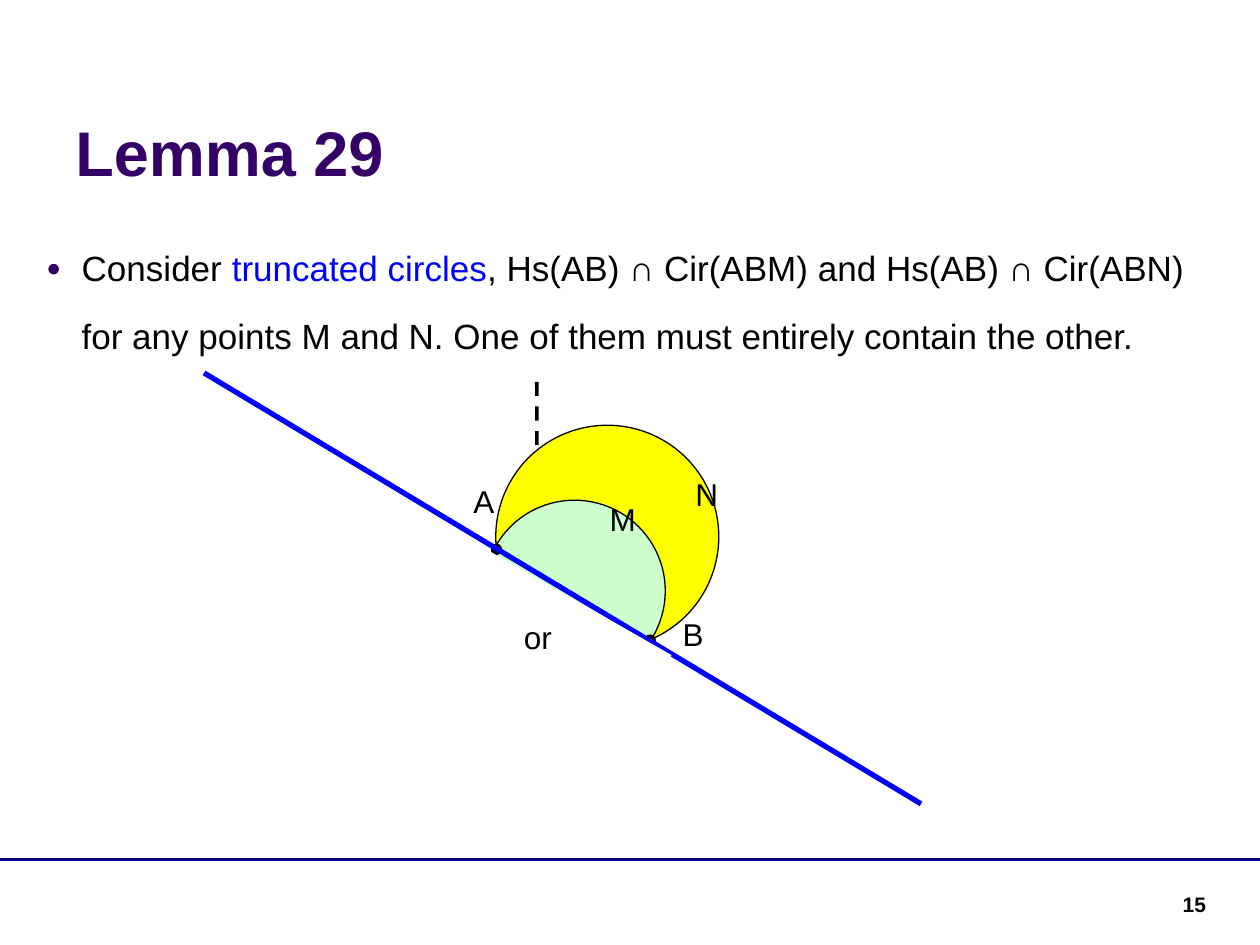
import pptx
import pptx.util
import pptx.dml.color
import pptx.enum.dml
import pptx.enum.shapes
import pptx.enum.text
import pptx.oxml
import pptx.oxml.ns

In, Pt = pptx.util.Inches, pptx.util.Pt
SHAPE = pptx.enum.shapes.MSO_SHAPE
ALIGN = pptx.enum.text.PP_ALIGN
ANCHOR = pptx.enum.text.MSO_ANCHOR
DASH = pptx.enum.dml.MSO_LINE.DASH
W, H = 10, 7.5

COLORS = {"rule": "000080", "ink": "000000", "title": "330066", "edge": "0000FF",
          "outer": "FFFF00", "inner": "CCFFCC", "paper": "FFFFFF"}

# Content
TITLE = [("Lemma 29", "title")]
NUMBER = [("15", "ink")]
LEMMA = [
    ("Consider ", "ink"), ("truncated circles", "edge"),
    (", Hs(AB) ∩ Cir(ABM) and Hs(AB) ∩ Cir(ABN) for any points M and N. "
     "One of them must entirely contain the other.", "ink")]

# Diagram: circles as (centre x, centre y, diameter, fill)
CIRCLE_N = (4.82, 4.26, 1.77, "outer")
CIRCLE_M = (4.56, 4.69, 1.44, "inner")
POINTS = [(3.94, 4.36, 0.08, "ink"), (5.16, 5.08, 0.08, "ink")]
HALF_PLANE = [(2.61, 5.46), (4.48, 6.59), (5.33, 5.2), (3.51, 4.16)]
# Labels as (text, left, top, width)
END_LABELS = [("A", 3.66, 3.78, 0.94), ("B", 5.32, 4.83, 0.94)]
OR_LABEL = ("or", 4.06, 4.86, 0.85)
CIRCLE_LABELS = [("M", 4.74, 3.92, 0.94), ("N", 5.42, 3.72, 0.94)]

prs = pptx.Presentation()
prs.slide_width, prs.slide_height = In(W), In(H)
s = prs.slides.add_slide(prs.slide_layouts[6])


def rgb(name):
    return pptx.dml.color.RGBColor.from_string(COLORS[name])


def add_line(start, end, color, width, dash=None):
    c = s.shapes.add_connector(pptx.enum.shapes.MSO_CONNECTOR.STRAIGHT,
                               *(In(v) for v in start + end))
    c.line.color.rgb = rgb(color)
    for key, value in {"width": Pt(width), "dash_style": dash}.items():
        setattr(c.line, key, value)
    pptx.oxml.ns.qn("a:effectLst")
    c._element.spPr.append(pptx.oxml.parse_xml(
        '<a:effectLst %s/>' % pptx.oxml.ns.nsdecls("a")))


def paint(sp, fill, line=None):
    sp.shadow.inherit = False
    sp.fill.solid()
    sp.fill.fore_color.rgb = rgb(fill)
    if line:
        sp.line.color.rgb = rgb(line)
        sp.line.width = Pt(0.75)
    else:
        sp.line.fill.background()


def add_circle(x, y, d, fill):
    sp = s.shapes.add_shape(SHAPE.OVAL, In(x - d / 2), In(y - d / 2), In(d), In(d))
    paint(sp, fill, "ink")


def add_text(runs, box, size, bold=False, align=ALIGN.LEFT, anchor=ANCHOR.TOP):
    tf = s.shapes.add_textbox(*(In(v) for v in box)).text_frame
    for key, value in {"word_wrap": True, "vertical_anchor": anchor}.items():
        setattr(tf, key, value)
    p = tf.paragraphs[0]
    p.alignment = align
    for text, color in runs:
        r = p.add_run()
        r.text = text
        for key, value in {"name": "Arial", "size": Pt(size), "bold": bold}.items():
            setattr(r.font, key, value)
        r.font.color.rgb = rgb(color)
    return p


def add_label(text, left, top, width):
    add_text([(text, "ink")], (left, top, width, 0.4), 18)


def add_bullet(p):
    pPr = p._p.get_or_add_pPr()
    pPr.set("marL", str(In(0.4)))
    pPr.set("indent", str(In(-0.28)))
    for tag in ('<a:buClr %s><a:srgbClr val="' + COLORS["title"] + '"/></a:buClr>',
                '<a:buSzPct %s val="70000"/>', '<a:buFont %s typeface="Arial"/>',
                '<a:buChar %s char="●"/>'):
        pPr.append(pptx.oxml.parse_xml(tag % pptx.oxml.ns.nsdecls("a")))


# Footer rule, dashed guide and larger circle
add_line((0, 6.82), (W, 6.82), "rule", 2)
add_line((4.26, 3.03), (4.27, 5.66), "ink", 2, DASH.DASH)
add_circle(*CIRCLE_N)

# Page number and title
add_text(NUMBER, (8.35, 7.03, 1.32, 0.28), 12, True, ALIGN.RIGHT)
add_text(TITLE, (0.5, 0.13, 9.3, 1.42), 36, True, anchor=ANCHOR.BOTTOM)

# Smaller circle, end points and their labels
for circle in [CIRCLE_M] + POINTS:
    add_circle(*circle)
for label in END_LABELS:
    add_label(*label)

# Line AB, with the half-plane below it covered
add_line((7.31, 6.38), (1.62, 2.96), "edge", 3)
fb = s.shapes.build_freeform(*(In(v) for v in HALF_PLANE[0]))
fb.add_line_segments([(In(x), In(y)) for x, y in HALF_PLANE[1:]], close=True)
paint(fb.convert_to_shape(), "paper")
add_label(*OR_LABEL)

# Lemma statement
p = add_text(LEMMA, (0.15, 1.71, 9.68, 5.03), 20)
for key, value in {"line_spacing": 1.6, "space_before": Pt(4)}.items():
    setattr(p, key, value)
add_bullet(p)

# Circle labels
for label in CIRCLE_LABELS:
    add_label(*label)

prs.save("out.pptx")
